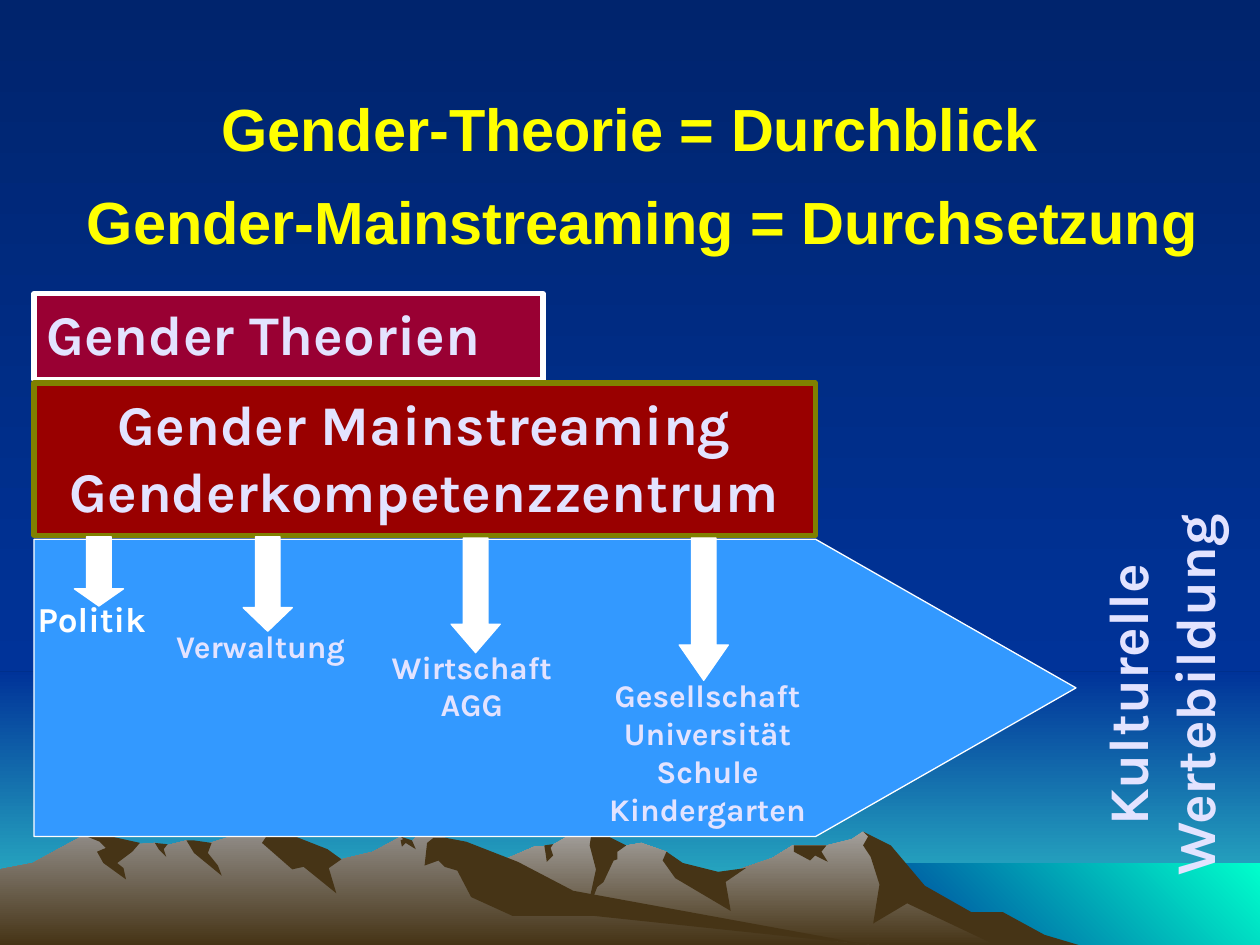
from pptx import Presentation
from pptx.dml.color import RGBColor
from pptx.enum.shapes import MSO_SHAPE
from pptx.enum.text import MSO_ANCHOR, PP_ALIGN
from pptx.util import Inches, Pt

RECT, PENTAGON, DOWN = MSO_SHAPE.RECTANGLE, MSO_SHAPE.PENTAGON, MSO_SHAPE.DOWN_ARROW
LEFT, CENTER = PP_ALIGN.LEFT, PP_ALIGN.CENTER
TOP, MIDDLE = MSO_ANCHOR.TOP, MSO_ANCHOR.MIDDLE

COLORS = {
    "night": "00246D", "blue": "003399", "horizon": "33CCCC", "sea": "00FFCC",
    "rock_back": "A5A29F", "rock_front": "938F8B", "shade": "463416",
    "title": "FFFF00", "text": "E3E3FF", "white": "FFFFFF", "arrow": "3399FF",
    "theory": "990033", "mainstreaming": "990000", "olive": "808000",
}

BACK_RIDGE = [
    (8.02, 7.4), (7.78, 7.27), (7.64, 7.23), (7.23, 6.98), (7.02, 6.71), (6.85, 6.6),
    (6.76, 6.66), (6.56, 6.71), (6.29, 6.71), (6.13, 6.81), (5.66, 6.97), (5.36, 6.9),
    (5.29, 6.76), (5.09, 6.69), (4.86, 6.73), (4.71, 6.58), (4.65, 6.58), (4.5, 6.64),
    (4.38, 6.71), (4.24, 6.72), (3.94, 6.85), (3.55, 6.98), (3.27, 7.09), (2.77, 7.39),
    (2.58, 7.5), (8.21, 7.5)]
FRONT_RIDGE = [
    (6.9, 7.5), (6.67, 7.48), (4.32, 7.12), (3.54, 6.65), (3.31, 6.63), (3.27, 6.68),
    (3.18, 6.64), (2.96, 6.76), (2.71, 6.82), (2.6, 6.76), (2.36, 6.81), (2.23, 6.63),
    (2.12, 6.58), (1.97, 6.58), (1.89, 6.62), (1.6, 6.71), (1.48, 6.67), (1.32, 6.71),
    (1.23, 6.69), (0.94, 6.71), (0.68, 6.62), (0.46, 6.74), (0.26, 6.85), (0, 6.9),
    (0, 7.5)]
BACK_SHADES = [
    [(7.96, 7.24), (7.71, 7.24), (7.34, 7.03), (7.07, 6.71), (6.85, 6.6), (6.89, 6.64),
     (6.85, 6.71), (6.91, 6.8), (6.98, 7.02), (6.93, 7.33), (7.2, 7.17), (7.9, 7.5),
     (8.56, 7.5), (8.29, 7.42)],
    [(4.71, 6.58), (4.74, 6.62), (4.69, 6.64), (4.68, 6.71), (4.73, 6.9), (4.65, 7.27),
     (4.74, 7.04), (4.79, 7), (4.87, 6.83), (4.9, 6.82), (4.9, 6.76), (4.97, 6.71)],
    [(5.29, 6.76), (5.26, 6.83), (5.36, 6.97), (5.8, 7.23), (5.76, 7), (5.92, 6.89),
     (5.7, 6.92), (5.42, 6.85)],
    [(6.5, 6.71), (6.3, 6.71), (6.3, 6.76), (6.43, 6.83), (6.47, 6.79), (6.57, 6.84),
     (6.52, 6.76), (6.56, 6.71)],
    [(4.33, 6.77), (4.32, 6.71), (4.39, 6.7), (4.37, 6.73), (4.39, 6.79), (4.34, 6.84)],
]
FRONT_SHADES = [
    [(2.12, 6.63), (2.08, 6.69), (2.32, 6.9), (2.41, 6.88), (2.67, 7.09), (2.61, 6.89),
     (2.71, 6.82), (2.6, 6.74), (2.32, 6.63), (2.13, 6.59)],
    [(3.7, 6.68), (3.54, 6.65), (3.44, 6.65), (3.39, 6.69), (3.37, 6.87), (3.48, 6.83),
     (3.53, 6.88), (3.63, 6.91), (3.74, 7.12), (4.07, 7.27), (4.72, 7.27), (6.9, 7.5),
     (4.55, 7.07), (4.11, 6.84)],
    [(3.18, 6.67), (3.2, 6.66), (3.18, 6.64), (3.27, 6.67), (3.3, 6.74), (3.22, 6.69),
     (3.19, 6.72)],
    [(1.54, 6.67), (1.68, 6.69), (1.65, 6.77), (1.73, 6.87), (1.76, 6.95), (1.54, 6.77),
     (1.48, 6.67)],
    [(1.33, 6.7), (1.3, 6.74), (1.32, 6.8), (1.26, 6.74), (1.23, 6.69)],
    [(1.11, 6.69), (1.05, 6.76), (0.93, 6.85), (0.98, 6.89), (1, 6.98), (0.82, 6.85),
     (0.77, 6.76), (0.84, 6.73), (0.79, 6.68), (0.69, 6.64), (0.69, 6.62), (0.84, 6.63)],
]

# left, top, width, height, alignment, size, colour, lines
AREAS = [
    (-0.07, 2.36, 1.1, 0.43, LEFT, 20, "white", ["Politik"]),
    (1.03, 2.6, 1.65, 0.4, LEFT, 18, "text", ["Verwaltung"]),
    (2.68, 2.76, 1.59, 0.7, CENTER, 18, "text", ["Wirtschaft", "AGG"]),
    (4.42, 2.99, 1.85, 1.3, CENTER, 18, "text",
     ["Gesellschaft", "Universität", "Schule", "Kindergarten"]),
]
# left, top, height, head length as a share of the width
DOWN_ARROWS = [(0.32, 1.93, 0.55, 0.35), (1.66, 1.93, 0.75, 0.48),
               (3.31, 1.94, 0.91, 0.58), (5.12, 1.94, 1.13, 0.72)]


def rgb(name):
    return RGBColor.from_string(COLORS[name])


def paint(fill, colors, angle=270):
    """Fill with one colour, or with a gradient between two."""
    if len(colors) == 1:
        fill.solid()
        fill.fore_color.rgb = rgb(colors[0])
        return
    fill.gradient()
    fill.gradient_angle = angle
    for i, color in enumerate(colors):
        fill.gradient_stops[i].position = i
        fill.gradient_stops[i].color.rgb = rgb(color)


def finish(sp, colors, line=None, width=0.75, angle=270):
    sp.shadow.inherit = False
    paint(sp.fill, colors, angle)
    if line:
        sp.line.color.rgb = rgb(line)
        sp.line.width = Pt(width)
    else:
        sp.line.fill.background()


def add_preset(s, kind, x, y, w, h, *colors, **style):
    sp = s.shapes.add_shape(kind, Inches(x), Inches(y), Inches(w), Inches(h))
    finish(sp, colors, **style)
    return sp


def add_outline(s, x, y, points, *colors):
    pts = [(Inches(x + px), Inches(y + py)) for px, py in points]
    builder = s.shapes.build_freeform(*pts[0], scale=1.0)
    builder.add_line_segments(pts[1:], close=True)
    finish(builder.convert_to_shape(), colors)


def write(sp, lines, size, color="text", font="Karla", align=CENTER, anchor=TOP):
    tf = sp.text_frame
    tf.word_wrap = True
    tf.vertical_anchor = anchor
    tf.text = "\n".join(lines)
    for p in tf.paragraphs:
        p.alignment = align
        p.font.size, p.font.bold, p.font.name = Pt(size), True, font
        p.font.color.rgb = rgb(color)


def add_text(s, x, y, w, h, lines, size, **style):
    sp = s.shapes.add_textbox(Inches(x), Inches(y), Inches(w), Inches(h))
    write(sp, lines, size, **style)
    return sp


def landscape(s, x, y, w, h):
    sky = 5.33
    add_preset(s, RECT, x, y + sky, w, h - sky, "blue", "horizon")
    add_preset(s, RECT, x, y, w, sky, "night", "blue")
    add_preset(s, RECT, x + 6.83, y + 6.85, w - 6.83, h - 6.85, "blue", "sea", angle=45)
    for ridge, rock, shades in ((BACK_RIDGE, "rock_back", BACK_SHADES),
                                (FRONT_RIDGE, "rock_front", FRONT_SHADES)):
        add_outline(s, x, y, ridge, rock, "shade")
        for shade in shades:
            add_outline(s, x, y, shade, "shade")


def headings(s, x, y, w):
    style = {"color": "title", "font": "Arial", "anchor": MIDDLE}
    add_text(s, x + 0.3, y, w - 0.8, 0.62, ["Gender-Theorie = Durchblick"], 34, **style)
    add_text(s, x, y + 0.79, w, 0.53, ["Gender-Mainstreaming = Durchsetzung"], 34, **style)


def implementation(s, x, y):
    """Two banners above a large arrow that holds the fields of action."""
    sp = add_preset(s, PENTAGON, x, y + 1.95, 8.27, 2.36, "arrow", line="white")
    sp.adjustments[0] = 0.876
    sp = add_preset(s, RECT, x, y, 4.04, 0.68, "theory", line="white", width=3)
    write(sp, ["Gender Theorien"], 32, align=LEFT)
    sp = add_preset(s, RECT, x, y + 0.71, 6.2, 1.21, "mainstreaming", line="olive", width=3)
    write(sp, ["Gender Mainstreaming", "Genderkompetenzzentrum"], 32)
    for dx, dy, w, h, align, size, color, lines in AREAS:
        add_text(s, x + dx, y + dy, w, h, lines, size, color=color, align=align)
    for dx, dy, h, head in DOWN_ARROWS:
        sp = add_preset(s, DOWN, x + dx, y + dy, 0.39, h, "white", line="white")
        sp.adjustments[1] = head


def outcome(s, x, y, w, h):
    sp = add_text(s, x, y, w, h, ["Kulturelle", "Wertebildung"], 32)
    sp.rotation = 270


def main():
    prs = Presentation()
    prs.slide_width, prs.slide_height = Inches(10), Inches(7.5)
    s = prs.slides.add_slide(prs.slide_layouts[6])
    paint(s.background.fill, ("night", "blue"))
    landscape(s, 0, 0, 10, 7.5)
    headings(s, 0.2, 0.7, 9.8)
    implementation(s, 0.27, 2.33)
    outcome(s, 7.52, 4.93, 3.37, 1.17)
    prs.save("out.pptx")


if __name__ == "__main__":
    main()
